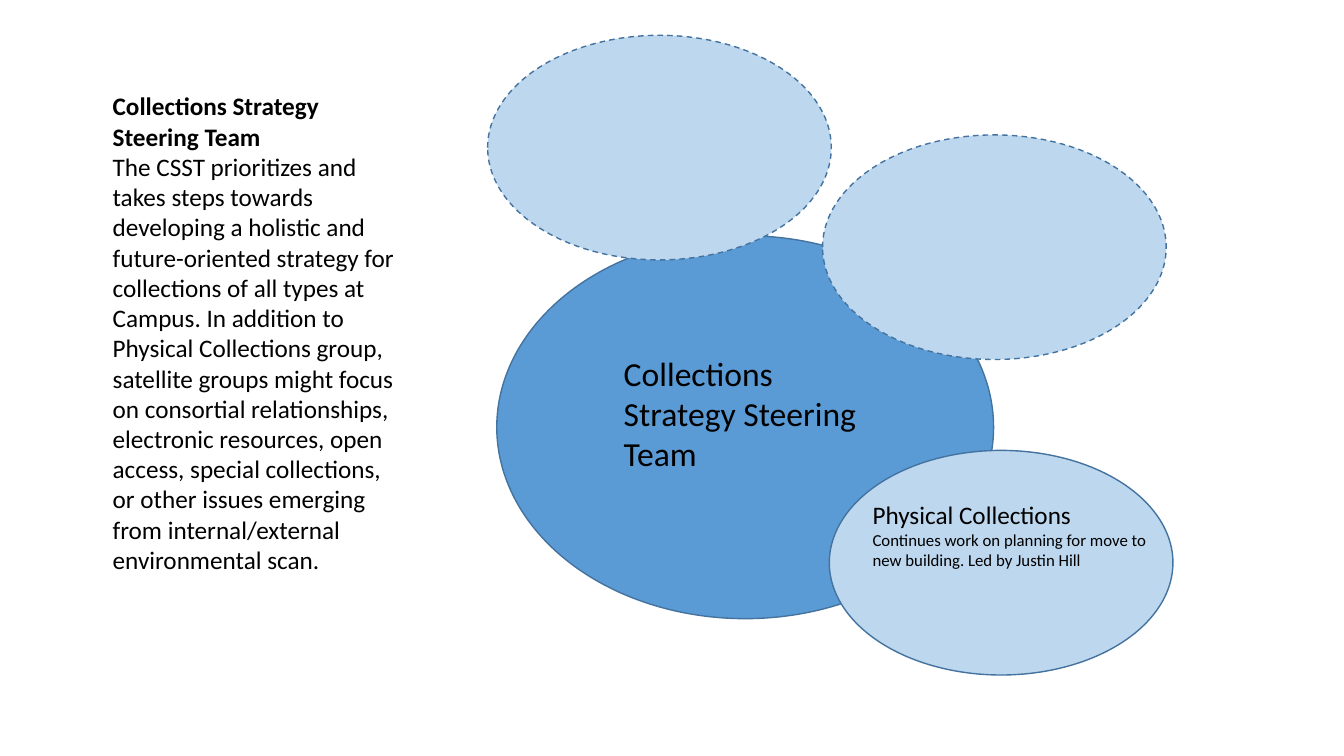
"""Build the Collections Strategy Steering Team slide."""
from pptx import Presentation
from pptx.dml.color import RGBColor
from pptx.enum.dml import MSO_LINE
from pptx.enum.shapes import MSO_SHAPE
from pptx.enum.text import MSO_AUTO_SIZE
from pptx.util import Cm, Pt

ELLIPSE = MSO_SHAPE.OVAL
SOLID = MSO_LINE.SOLID
DASH = MSO_LINE.DASH
GROW = MSO_AUTO_SIZE.SHAPE_TO_FIT_TEXT
FONT = "Calibri"
COLORS = {
    "core": "5B9BD5",
    "satellite": "BDD7EE",
    "outline": "43739E",
    "text": "000000",
}
CORE_SIZE = (12.52, 9.65)
SATELLITE_SIZE = (8.66, 5.66)


def add_ellipse(page, left, top, size, color, dash):
    width, height = size
    ellipse = page.shapes.add_shape(ELLIPSE, Cm(left), Cm(top), Cm(width), Cm(height))
    ellipse.shadow.inherit = False
    ellipse.fill.solid()
    ellipse.fill.fore_color.rgb = RGBColor.from_string(COLORS[color])
    ellipse.line.color.rgb = RGBColor.from_string(COLORS["outline"])
    ellipse.line.width = Pt(1)
    ellipse.line.dash_style = dash


def add_text(page, left, top, width, height, lines):
    box = page.shapes.add_textbox(Cm(left), Cm(top), Cm(width), Cm(height))
    frame = box.text_frame
    frame.word_wrap = True
    frame.auto_size = GROW
    for index, (text, size, bold) in enumerate(lines):
        para = frame.add_paragraph() if index else frame.paragraphs[0]
        span = para.add_run()
        span.text = text
        span.font.name = FONT
        span.font.size = Pt(size)
        span.font.bold = bold
        span.font.color.rgb = RGBColor.from_string(COLORS["text"])


deck = Presentation()
deck.slide_width = Cm(33.87)
deck.slide_height = Cm(19.05)
page = deck.slides.add_slide(deck.slide_layouts[6])

add_ellipse(page, 12.52, 5.94, CORE_SIZE, "core", SOLID)
add_text(page, 15.47, 8.76, 6.83, 3.33, [
    ("Collections Strategy Steering Team", 24, False),
])

add_ellipse(page, 20.9, 11.35, SATELLITE_SIZE, "satellite", SOLID)
add_text(page, 21.74, 12.45, 8.2, 2.06, [
    ("Physical Collections", 18, False),
    ("Continues work on planning for move to new building. Led by Justin Hill", 12, False),
])

add_text(page, 2.59, 2.16, 7.92, 14.1, [
    ("Collections Strategy Steering Team", 18, True),
    ("The CSST prioritizes and takes steps towards developing a holistic and "
     "future-oriented strategy for collections of all types at Campus. In addition to "
     "Physical Collections group, satellite groups might focus on consortial "
     "relationships, electronic resources, open access, special collections, or other "
     "issues emerging from internal/external environmental scan.", 18, False),
])

for left, top in [(20.73, 3.4), (12.29, 0.89)]:
    add_ellipse(page, left, top, SATELLITE_SIZE, "satellite", DASH)

deck.save("out.pptx")
